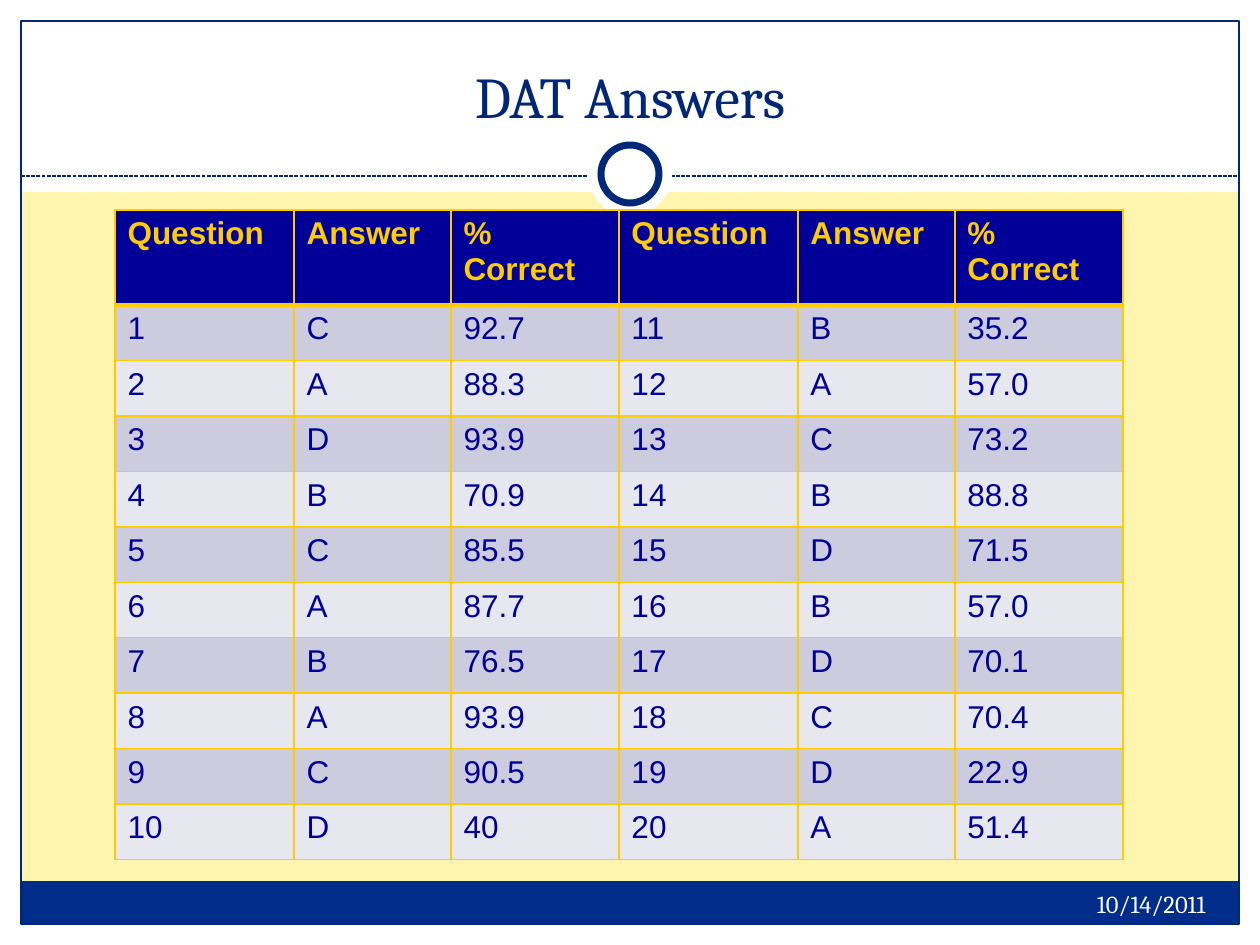
from lxml import etree
from pptx import Presentation
from pptx.dml.color import RGBColor
from pptx.enum.dml import MSO_LINE
from pptx.enum.shapes import MSO_CONNECTOR, MSO_SHAPE
from pptx.enum.text import MSO_ANCHOR, PP_ALIGN
from pptx.oxml.ns import qn
from pptx.util import Emu, Pt

WHITE = RGBColor(0xFF, 0xFF, 0xFF)
CREAM = RGBColor(0xFF, 0xF5, 0xAE)
FOOTER_BLUE = RGBColor(0x00, 0x2D, 0x89)
LINE_BLUE = RGBColor(0x00, 0x28, 0x79)
TITLE_BLUE = RGBColor(0x00, 0x26, 0x78)
TABLE_BLUE = RGBColor(0x00, 0x00, 0x99)
GOLD = RGBColor(0xFF, 0xCC, 0x00)
DARK_BAND = RGBColor(0xCC, 0xCC, 0xDE)
LIGHT_BAND = RGBColor(0xE7, 0xE7, 0xEF)

TITLE = "DAT Answers"
DATE = "10/14/2011"
HEADINGS = ["Question", "Answer", "% Correct"]
ANSWERS = [
    ("C", "92.7"), ("A", "88.3"), ("D", "93.9"), ("B", "70.9"), ("C", "85.5"),
    ("A", "87.7"), ("B", "76.5"), ("A", "93.9"), ("C", "90.5"), ("D", "40"),
    ("B", "35.2"), ("A", "57.0"), ("C", "73.2"), ("B", "88.8"), ("D", "71.5"),
    ("B", "57.0"), ("D", "70.1"), ("C", "70.4"), ("D", "22.9"), ("A", "51.4"),
]

WIDTH, HEIGHT, MARGIN = 1260, 945, 21
INNER_WIDTH, INNER_HEIGHT = WIDTH - 2 * MARGIN, HEIGHT - 2 * MARGIN
COLUMN_WIDTHS = [179, 157, 168]
HEADER_HEIGHT, BODY_HEIGHT = 95, 555
BODY_ROWS = len(ANSWERS) // 2

RECT, OVAL = MSO_SHAPE.RECTANGLE, MSO_SHAPE.OVAL
DECORATIONS = [
    (RECT, (0, HEIGHT - MARGIN, WIDTH, MARGIN), WHITE, None),
    (RECT, (0, 0, WIDTH, 192), WHITE, None),
    (RECT, (0, 0, MARGIN, HEIGHT), WHITE, None),
    (RECT, (WIDTH - MARGIN, 0, MARGIN, HEIGHT), WHITE, None),
    (RECT, (MARGIN, 881, INNER_WIDTH, 43), FOOTER_BLUE, None),
    (RECT, (MARGIN, MARGIN, INNER_WIDTH, INNER_HEIGHT), None, 0.75),
]
RINGS = [
    (OVAL, (588, 132, 84, 84), WHITE, None),
    (OVAL, (601, 145, 58, 58), WHITE, 4),
]


def px(*lengths):
    return [Emu(round(length * 914400 / 126)) for length in lengths]


def add_decoration(slide, kind, box, fill, line_width):
    shape = slide.shapes.add_shape(kind, *px(*box))
    shape.shadow.inherit = False
    if fill is None:
        shape.fill.background()
    else:
        shape.fill.solid()
        shape.fill.fore_color.rgb = fill
    if line_width is None:
        shape.line.fill.background()
    else:
        shape.line.color.rgb = LINE_BLUE
        shape.line.width = Pt(line_width)


def add_divider(slide):
    divider = slide.shapes.add_connector(
        MSO_CONNECTOR.STRAIGHT, *px(MARGIN, 176, WIDTH - MARGIN, 176))
    divider.line.color.rgb = LINE_BLUE
    divider.line.width = Pt(0.75)
    divider.line.dash_style = MSO_LINE.SQUARE_DOT
    properties = divider.element.find(qn("p:spPr"))
    etree.SubElement(properties, qn("a:effectLst"))


def add_run(paragraph, text, font_name, size, color, bold=False):
    run = paragraph.add_run()
    run.text = text
    run.font.name = font_name
    run.font.size = Pt(size)
    run.font.color.rgb = color
    run.font.bold = bold


def add_text(slide, box, text, size, color, alignment, anchor):
    frame = slide.shapes.add_textbox(*px(*box)).text_frame
    frame.word_wrap = True
    frame.vertical_anchor = anchor
    paragraph = frame.paragraphs[0]
    paragraph.alignment = alignment
    add_run(paragraph, text, "Cambria", size, color)


def add_borders(cell, top_width, bottom_width):
    properties = cell._tc.get_or_add_tcPr()
    widths = {"a:lnL": 1, "a:lnR": 1, "a:lnT": top_width, "a:lnB": bottom_width}
    for position, (tag, width) in enumerate(widths.items()):
        border = etree.Element(qn(tag), w=str(Pt(width)))
        fill = etree.SubElement(border, qn("a:solidFill"))
        etree.SubElement(fill, qn("a:srgbClr"), val=str(GOLD))
        properties.insert(position, border)


def add_answer_table(slide):
    numbered = [(str(number), *answer) for number, answer in enumerate(ANSWERS, 1)]
    rows = [HEADINGS * 2]
    rows += [left + right for left, right in zip(numbered[:BODY_ROWS], numbered[BODY_ROWS:])]
    widths = COLUMN_WIDTHS * 2
    box = px(115, 210, sum(widths), HEADER_HEIGHT + BODY_HEIGHT)
    table = slide.shapes.add_table(len(rows), len(widths), *box).table
    for column, width in zip(table.columns, px(*widths)):
        column.width = width
    heights = px(HEADER_HEIGHT, *[BODY_HEIGHT / BODY_ROWS] * BODY_ROWS)
    for index, (values, height) in enumerate(zip(rows, heights)):
        table.rows[index].height = height
        header = index == 0
        band = TABLE_BLUE if header else DARK_BAND if index % 2 else LIGHT_BAND
        for column, value in enumerate(values):
            cell = table.cell(index, column)
            cell.fill.solid()
            cell.fill.fore_color.rgb = band
            add_borders(cell, 3 if index == 1 else 1, 3 if header else 1)
            add_run(cell.text_frame.paragraphs[0], value, "Arial", 18,
                    GOLD if header else TABLE_BLUE, header)


def main():
    """Build the slide of test answers and save it."""
    presentation = Presentation()
    presentation.slide_width, presentation.slide_height = px(WIDTH, HEIGHT)
    slide = presentation.slides.add_slide(presentation.slide_layouts[6])
    slide.background.fill.solid()
    slide.background.fill.fore_color.rgb = CREAM
    for decoration in DECORATIONS:
        add_decoration(slide, *decoration)
    add_divider(slide)
    for ring in RINGS:
        add_decoration(slide, *ring)
    add_text(slide, (42, 32, 1176, 104), TITLE, 33, TITLE_BLUE,
             PP_ALIGN.CENTER, MSO_ANCHOR.BOTTOM)
    add_text(slide, (798, 883, 420, 50), DATE, 14, WHITE,
             PP_ALIGN.RIGHT, MSO_ANCHOR.TOP)
    add_answer_table(slide)
    presentation.save("out.pptx")


if __name__ == "__main__":
    main()
